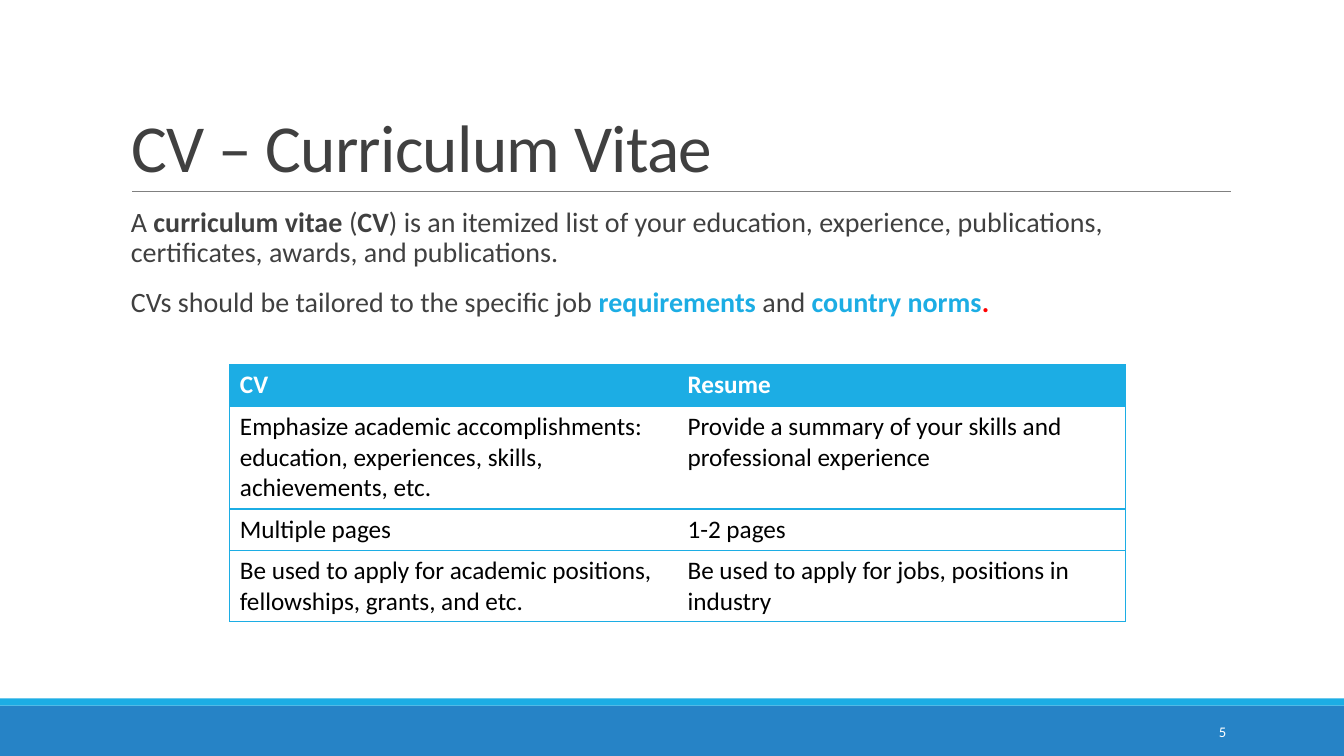
from lxml import etree
from pptx import Presentation
from pptx import util as u
from pptx.dml.color import RGBColor
from pptx.enum import shapes, text
from pptx.oxml import ns

WIDTH, HEIGHT = 13.33, 7.5
FONT = "Calibri"
COLORS = {
    "accent": "1CADE4",
    "footer": "2683C6",
    "rule": "808080",
    "body": "404040",
    "cell": "000000",
    "stop": "FF0000",
    "white": "FFFFFF",
}
INTRODUCTION = [
    [
        ("A ", {}),
        ("curriculum vitae ", {"bold": True}),
        ("(", {}),
        ("CV", {"bold": True}),
        (")\u00a0is an itemized list of your education, experience, publications, "
         "certificates, awards, and publications.", {}),
    ],
    [
        ("CVs should be tailored to the specific job ", {}),
        ("requirements ", {"bold": True, "color": "accent"}),
        ("and ", {}),
        ("country norms", {"bold": True, "color": "accent"}),
        (".", {"bold": True, "color": "stop"}),
    ],
]
COMPARISON = [
    ("CV", "Resume"),
    ("Emphasize academic accomplishments: education, experiences, skills, achievements, etc.",
     "Provide a summary of your skills and professional experience"),
    ("Multiple pages", "1-2 pages"),
    ("Be used to apply for academic positions, fellowships, grants, and etc.",
     "Be used to apply for jobs, positions in industry"),
]
ROW_HEIGHTS = [0.41, 1.02, 0.41, 0.71]


def rgb(name):
    return RGBColor.from_string(COLORS[name])


def box(left, top, width, height):
    return [u.Inches(length) for length in (left, top, width, height)]


def write(paragraph, content, size=20, color="body", bold=False, tracking=None):
    run = paragraph.add_run()
    run.text = content
    run.font.name = FONT
    run.font.size = u.Pt(size)
    run.font.bold = bold
    run.font.color.rgb = rgb(color)
    if tracking is not None:
        run.font._element.set("spc", str(int(tracking * 100)))


def add_band(slide, top, height, color):
    band = slide.shapes.add_shape(shapes.MSO_SHAPE.RECTANGLE, *box(0, top, WIDTH, height))
    band.shadow.inherit = False
    band.fill.solid()
    band.fill.fore_color.rgb = rgb(color)
    band.line.fill.background()


def add_rule(slide, left, right, top):
    rule = slide.shapes.add_connector(
        shapes.MSO_CONNECTOR.STRAIGHT, *box(left, top, right, top))
    rule.line.color.rgb = rgb("rule")
    rule.line.width = u.Pt(0.5)
    etree.SubElement(rule._element.spPr, ns.qn("a:effectLst"))


def set_title(slide, content):
    title = slide.shapes.title
    title.left, title.top, title.width, title.height = box(1.2, 0.31, 11, 1.59)
    frame = title.text_frame
    frame.auto_size = text.MSO_AUTO_SIZE.NONE
    frame.vertical_anchor = text.MSO_ANCHOR.BOTTOM
    paragraph = frame.paragraphs[0]
    paragraph.alignment = text.PP_ALIGN.LEFT
    paragraph.line_spacing = 0.85
    write(paragraph, content, size=48, tracking=-0.5)


def add_introduction(slide):
    frame = slide.shapes.add_textbox(*box(1.2, 2.02, 11, 1.5)).text_frame
    frame.word_wrap = True
    frame.margin_right = 0
    for index, pieces in enumerate(INTRODUCTION):
        paragraph = frame.add_paragraph() if index else frame.paragraphs[0]
        paragraph.line_spacing = 0.9
        paragraph.space_before = u.Pt(12)
        paragraph.space_after = u.Pt(2)
        for content, style in pieces:
            write(paragraph, content, **style)


def set_borders(cell, visible):
    properties = cell._tc.get_or_add_tcPr()
    for side in "LRTB":
        line = etree.SubElement(properties, ns.qn(f"a:ln{side}"), w=str(u.Pt(1)))
        if side in visible:
            fill = etree.SubElement(line, ns.qn("a:solidFill"))
            etree.SubElement(fill, ns.qn("a:srgbClr"), val=COLORS["accent"])
        else:
            etree.SubElement(line, ns.qn("a:noFill"))


def add_comparison(slide):
    frame = slide.shapes.add_table(
        len(COMPARISON), 2, *box(2.28, 3.62, 8.88, sum(ROW_HEIGHTS)))
    table = frame.table
    for row, height, contents in zip(table.rows, ROW_HEIGHTS, COMPARISON):
        row.height = u.Inches(height)
        header = contents is COMPARISON[0]
        for cell, content, outer in zip(row.cells, contents, "LR"):
            set_borders(cell, "TB" + outer)
            cell.fill.solid()
            cell.fill.fore_color.rgb = rgb("accent" if header else "white")
            write(cell.text_frame.paragraphs[0], content, size=18,
                  color="white" if header else "cell", bold=header)


def add_page_number(slide, number):
    frame = slide.shapes.add_textbox(*box(10.83, 7.06, 1.43, 0.4)).text_frame
    frame.word_wrap = True
    frame.vertical_anchor = text.MSO_ANCHOR.MIDDLE
    paragraph = frame.paragraphs[0]
    paragraph.alignment = text.PP_ALIGN.RIGHT
    write(paragraph, number, size=10.5, color="white")


def main():
    presentation = Presentation()
    presentation.slide_width = u.Inches(WIDTH)
    presentation.slide_height = u.Inches(HEIGHT)
    slide = presentation.slides.add_slide(presentation.slide_layouts[5])
    add_band(slide, 7, 0.5, "footer")
    add_band(slide, 6.93, 0.07, "accent")
    add_rule(slide, 1.31, 12.21, 1.9)
    set_title(slide, "CV – Curriculum Vitae")
    add_introduction(slide)
    add_comparison(slide)
    add_page_number(slide, "5")
    presentation.save("out.pptx")


if __name__ == "__main__":
    main()
